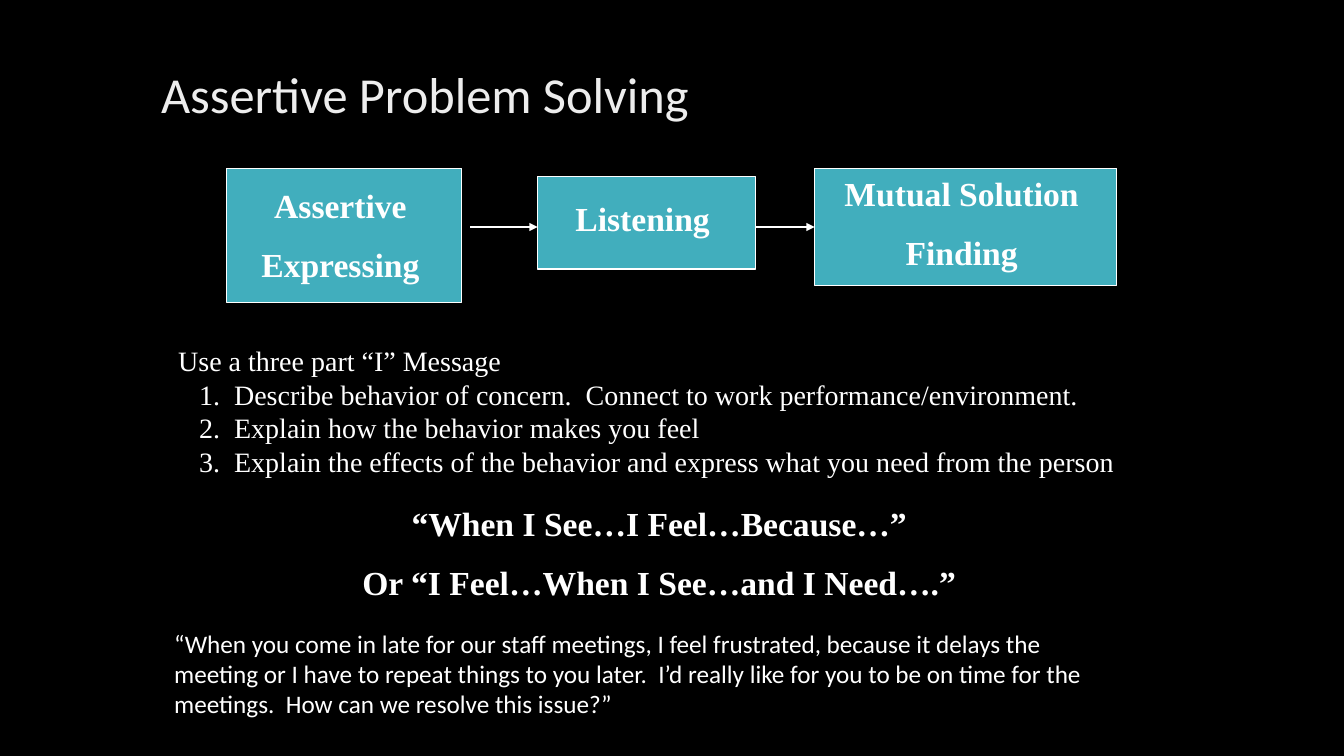
"""Builds the Assertive Problem Solving slide."""
from lxml.etree import SubElement
from pptx import Presentation
from pptx.dml.color import RGBColor
from pptx.enum.shapes import MSO_CONNECTOR, MSO_SHAPE
from pptx.enum.text import MSO_ANCHOR, PP_ALIGN
from pptx.oxml.ns import qn
from pptx.util import Cm, Pt

SERIF, SANS = "Times New Roman", "Calibri"
WHITE, TEAL, BLACK, PALE = "FFFFFF", "41AEBD", "000000", "EDEDED"


def colour(value):
    return RGBColor.from_string(value)


def write(frame, lines, font=SERIF, size=24, ink=WHITE, bold=False,
          align=PP_ALIGN.LEFT, gap=0, spacing=None, numbered_from=None):
    for index, line in enumerate(lines):
        paragraph = frame.paragraphs[0] if index == 0 else frame.add_paragraph()
        if numbered_from is not None and index >= numbered_from:
            properties = paragraph._p.get_or_add_pPr()
            properties.set("marL", str(Cm(1.41)))
            properties.set("indent", str(Cm(-0.88)))
            SubElement(properties, qn("a:buFont"), typeface=font)
            SubElement(properties, qn("a:buAutoNum"), type="arabicPeriod")
        paragraph.alignment = align
        if spacing:
            paragraph.line_spacing = spacing
        if index and gap:
            paragraph.space_before = Pt(gap)
        run = paragraph.add_run()
        run.text = line
        run.font.name, run.font.size, run.font.bold = font, Pt(size), bold
        run.font.color.rgb = colour(ink)


class ProblemSolvingSlide:
    """Holds the slide and draws each kind of element in its style."""

    def __init__(self, presentation):
        self.slide = presentation.slides.add_slide(presentation.slide_layouts[6])
        self.shapes = self.slide.shapes
        self.slide.background.fill.solid()
        self.slide.background.fill.fore_color.rgb = colour(BLACK)

    def text(self, place, lines, anchor=MSO_ANCHOR.TOP, inset=0.13, **style):
        frame = self.shapes.add_textbox(*map(Cm, place)).text_frame
        frame.word_wrap = True
        frame.vertical_anchor = anchor
        frame.margin_top = frame.margin_bottom = Cm(inset)
        write(frame, lines, **style)

    def step(self, place, label_place, label, inset=0.13):
        step = self.shapes.add_shape(MSO_SHAPE.RECTANGLE, *map(Cm, place))
        step.shadow.inherit = False
        step.fill.solid()
        step.fill.fore_color.rgb = colour(TEAL)
        step.line.color.rgb = colour(WHITE)
        step.line.width = Pt(0.75)
        self.text(label_place, label, inset=inset, bold=True,
                  align=PP_ALIGN.CENTER, gap=13)
        return step

    def arrow(self, start, end, level, target=None):
        arrow = self.shapes.add_connector(
            MSO_CONNECTOR.STRAIGHT, Cm(start), Cm(level), Cm(end), Cm(level))
        if target is not None:
            arrow.end_connect(target, 1)
        arrow.line.color.rgb = colour(WHITE)
        arrow.line.width = Pt(0.75)
        SubElement(arrow.line._get_or_add_ln(), qn("a:tailEnd"), type="triangle")
        SubElement(arrow._element.spPr, qn("a:effectLst"))


def main():
    presentation = Presentation()
    presentation.slide_width, presentation.slide_height = Cm(33.87), Cm(19.05)
    page = ProblemSolvingSlide(presentation)

    page.text((3.81, 1.55, 22.86, 1.78), ["Assertive Problem Solving"],
              anchor=MSO_ANCHOR.MIDDLE, font=SANS, size=36, ink=PALE, spacing=0.9)

    page.step((5.72, 4.24, 5.92, 3.38), (5.72, 4.66, 5.72, 2.57),
              ["Assertive", "Expressing"], inset=0)
    page.step((13.55, 4.45, 5.5, 2.33), (13.76, 4.87, 4.87, 1.28), ["Listening"])
    solution = page.step((20.53, 4.24, 7.62, 2.96), (20.53, 4.24, 7.41, 2.82),
                         ["Mutual Solution", "Finding"])
    page.arrow(11.85, 13.55, 5.72)
    page.arrow(19.05, 20.53, 5.72, target=solution)

    page.text((4.24, 8.53, 24.74, 3.68), [
        "Use a three part “I” Message",
        "Describe behavior of concern.  Connect to work performance/environment.",
        "Explain how the behavior makes you feel",
        "Explain the effects of the behavior and express what you need from the person",
    ], size=20, numbered_from=1)

    page.text((6.56, 12.55, 20.11, 2.82), [
        "“When I See…I Feel…Because…”",
        "Or “I Feel…When I See…and I Need….”",
    ], bold=True, align=PP_ALIGN.CENTER, gap=13)

    page.text((4.14, 15.7, 24.1, 2.57), [
        "“When you come in late for our staff meetings, I feel frustrated, because "
        "it delays the meeting or I have to repeat things to you later.  I’d really "
        "like for you to be on time for the meetings.  How can we resolve this issue?”",
    ], font=SANS, size=18)

    presentation.save("out.pptx")


if __name__ == "__main__":
    main()
